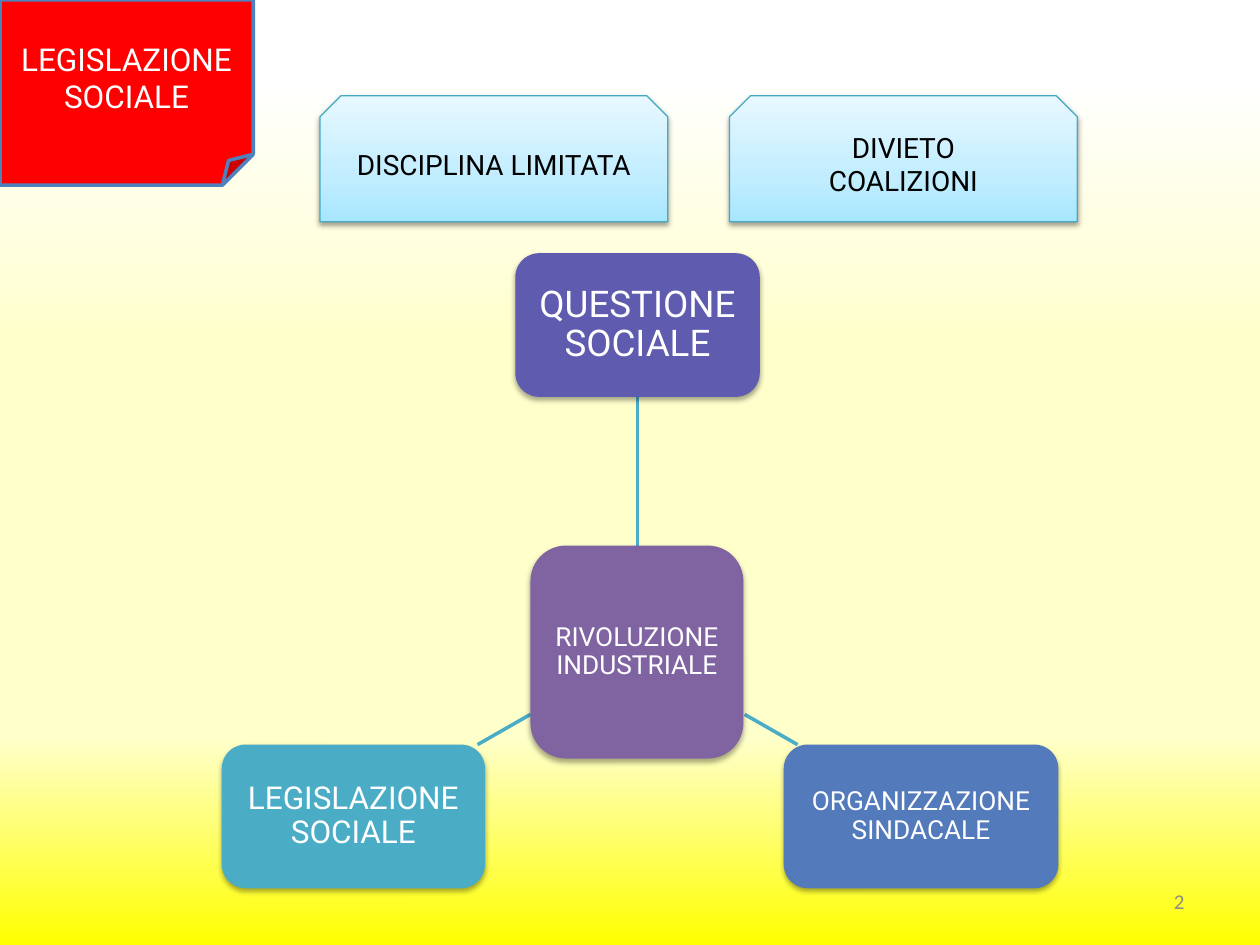
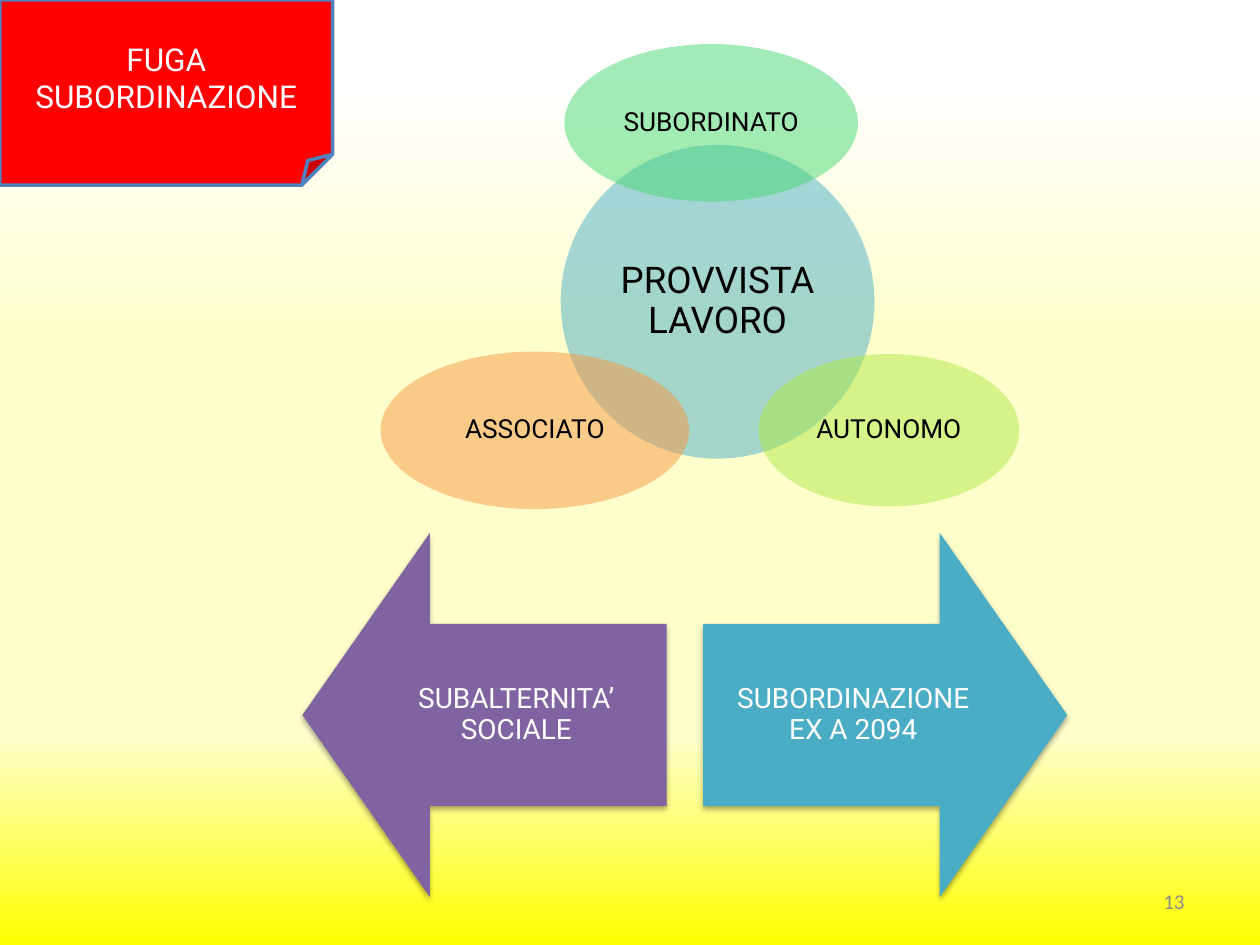
"""Build two slides on social legislation and the flight from subordination."""
import pptx
import pptx.dml.color
import pptx.enum.shapes
import pptx.enum.text
import pptx.oxml.ns
import pptx.util
from lxml import etree

Inches = pptx.util.Inches
Pt = pptx.util.Pt
qn = pptx.oxml.ns.qn
Shape = pptx.enum.shapes.MSO_SHAPE
Align = pptx.enum.text.PP_ALIGN

COLORS = {
    "white": "FFFFFF",
    "black": "000000",
    "number": "8C8C8C",
    "cream": "FFFFCC",
    "yellow": "FFFF00",
    "red": "FF0000",
    "title_line": "4F81BD",
    "teal": "4BACC6",
    "purple": "8064A2",
    "indigo": "5F5BAE",
    "blue": "537ABA",
    "green": "47D872",
    "lime": "ACE946",
    "orange": "F79646",
    "tag_line": "46AAC5",
    "tag_dark": "A7E6FF",
    "tag_middle": "C1EDFF",
    "tag_light": "E7F8FF",
}
BACKGROUND_STOPS = [(8, "white"), (36, "cream"), (78, "cream"), (100, "yellow")]
TAG_STOPS = [(0, "tag_dark"), (35, "tag_middle"), (100, "tag_light")]
TEXT_FONT = "Roboto"
NUMBER_FONT = "Calibri"


def rgb(color):
    return pptx.dml.color.RGBColor.from_string(COLORS[color])


def set_gradient(fill, element, stops, angle):
    fill.gradient()
    fill.gradient_angle = angle
    stop_list = element.find(".//" + qn("a:gsLst"))
    for stop in list(stop_list):
        stop_list.remove(stop)
    for position, color in stops:
        stop = etree.SubElement(stop_list, qn("a:gs"), pos=str(position * 1000))
        etree.SubElement(stop, qn("a:srgbClr"), val=COLORS[color])


def set_alpha(color_element, percent):
    etree.SubElement(color_element, qn("a:alpha"), val=str(percent * 1000))


def add_shadow(shape, percent, distance):
    effects = shape.element.spPr.find(qn("a:effectLst"))
    shadow = etree.SubElement(
        effects, qn("a:outerShdw"), blurRad=str(Pt(3.1)), dist=str(Pt(distance)),
        dir="5400000", rotWithShape="0")
    color = etree.SubElement(shadow, qn("a:srgbClr"), val=COLORS["black"])
    set_alpha(color, percent)


def write_text(shape, text, size, color, font=TEXT_FONT, align=Align.CENTER,
               spacing=1.0, inset=None):
    frame = shape.text_frame
    frame.text = text
    frame.word_wrap = True
    frame.auto_size = pptx.enum.text.MSO_AUTO_SIZE.NONE
    frame.vertical_anchor = pptx.enum.text.MSO_ANCHOR.MIDDLE
    if inset is not None:
        frame.margin_left = frame.margin_right = Inches(inset)
        frame.margin_top = frame.margin_bottom = Inches(inset)
    for paragraph in frame.paragraphs:
        paragraph.alignment = align
        paragraph.line_spacing = spacing
        for run in paragraph.runs:
            run.font.name = font
            run.font.size = Pt(size)
            run.font.color.rgb = rgb(color)


def add_plain_shape(slide, kind, box, fill=None):
    shape = slide.shapes.add_shape(kind, *map(Inches, box))
    shape.shadow.inherit = False
    shape.line.fill.background()
    if fill:
        shape.fill.solid()
        shape.fill.fore_color.rgb = rgb(fill)
    return shape


def set_line(shape, color, width):
    shape.line.color.rgb = rgb(color)
    shape.line.width = Pt(width)


def add_titled_slide(presentation, title_text, title_width, number):
    slide = presentation.slides.add_slide(presentation.slide_layouts[5])
    set_gradient(slide.background.fill, slide.element, BACKGROUND_STOPS, 270)

    note = add_plain_shape(slide, Shape.FOLDED_CORNER, (0, 0, title_width, 1.47), "red")
    set_line(note, "title_line", 2)
    title = slide.shapes.title
    title.left, title.top = Inches(0), Inches(0)
    title.width, title.height = Inches(title_width), Inches(1.23)
    write_text(title, title_text, 18, "white")
    note.element.addnext(title.element)

    number_box = slide.shapes.add_textbox(*map(Inches, (7.17, 6.95, 2.33, 0.4)))
    write_text(number_box, str(number), 12, "number", NUMBER_FONT, Align.RIGHT)
    return slide


def add_tag(slide, left, text):
    tag = add_plain_shape(slide, Shape.SNIP_2_SAME_RECTANGLE, (left, 0.76, 2.76, 1))
    set_gradient(tag.fill, tag.element, TAG_STOPS, 90)
    set_line(tag, "tag_line", 0.75)
    add_shadow(tag, 38, 1.6)
    write_text(tag, text, 16, "black")


def add_block(slide, kind, box, fill, text, size, inset):
    block = add_plain_shape(slide, kind, box, fill)
    add_shadow(block, 35, 1.8)
    write_text(block, text, size, "white", spacing=0.9, inset=inset)
    return block


def add_spoke(slide, start, end):
    spoke = slide.shapes.add_connector(
        pptx.enum.shapes.MSO_CONNECTOR.STRAIGHT, *map(Inches, start + end))
    set_line(spoke, "teal", 2)
    etree.SubElement(spoke.element.spPr, qn("a:effectLst"))


def add_circle(slide, box, fill, text, size):
    circle = add_plain_shape(slide, Shape.OVAL, box, fill)
    set_alpha(circle.element.spPr.find(qn("a:solidFill")).find(qn("a:srgbClr")), 50)
    write_text(circle, text, size, "black", spacing=0.9, inset=0.02)


def add_arrow(slide, kind, left, fill, text):
    arrow = add_block(slide, kind, (left, 4.23, 2.89, 2.89), fill, text, 16, 0.12)
    arrow.adjustments[0] = 0.5
    arrow.adjustments[1] = 0.35


def build_social_question(presentation):
    slide = add_titled_slide(presentation, "LEGISLAZIONE SOCIALE", 2.01, 2)
    add_tag(slide, 2.54, "DISCIPLINA LIMITATA")
    add_tag(slide, 5.79, "DIVIETO\nCOALIZIONI")
    for start, end in [
        ((5.06, 4.33), (5.06, 3.14)),
        ((5.91, 5.67), (6.33, 5.91)),
        ((4.21, 5.67), (3.79, 5.91)),
    ]:
        add_spoke(slide, start, end)
    for box, fill, text, size, inset in [
        ((4.21, 4.33, 1.69, 1.69), "purple", "RIVOLUZIONE INDUSTRIALE", 15, 0.04),
        ((4.09, 2.01, 1.94, 1.14), "indigo", "QUESTIONE SOCIALE", 21, 0.06),
        ((6.22, 5.91, 2.18, 1.14), "blue", "ORGANIZZAZIONE SINDACALE", 15, 0.04),
        ((1.76, 5.91, 2.09, 1.14), "teal", "LEGISLAZIONE SOCIALE", 18, 0.05),
    ]:
        add_block(slide, Shape.ROUNDED_RECTANGLE, box, fill, text, size, inset)


def build_subordination(presentation):
    slide = add_titled_slide(presentation, "FUGA SUBORDINAZIONE", 2.64, 13)
    for box, fill, text, size in [
        ((4.45, 1.15, 2.49, 2.49), "teal", "PROVVISTA LAVORO", 21),
        ((4.48, 0.35, 2.33, 1.25), "green", "SUBORDINATO", 15),
        ((6.02, 2.81, 2.07, 1.21), "lime", "AUTONOMO", 15),
        ((3.02, 2.79, 2.45, 1.25), "orange", "ASSOCIATO", 15),
    ]:
        add_circle(slide, box, fill, text, size)
    add_arrow(slide, Shape.LEFT_ARROW, 2.4, "purple", "SUBALTERNITA’ SOCIALE")
    add_arrow(slide, Shape.RIGHT_ARROW, 5.58, "teal", "SUBORDINAZIONE EX A 2094")


def main():
    presentation = pptx.Presentation()
    presentation.slide_width = Inches(10)
    presentation.slide_height = Inches(7.5)
    build_social_question(presentation)
    build_subordination(presentation)
    presentation.save("out.pptx")


if __name__ == "__main__":
    main()
